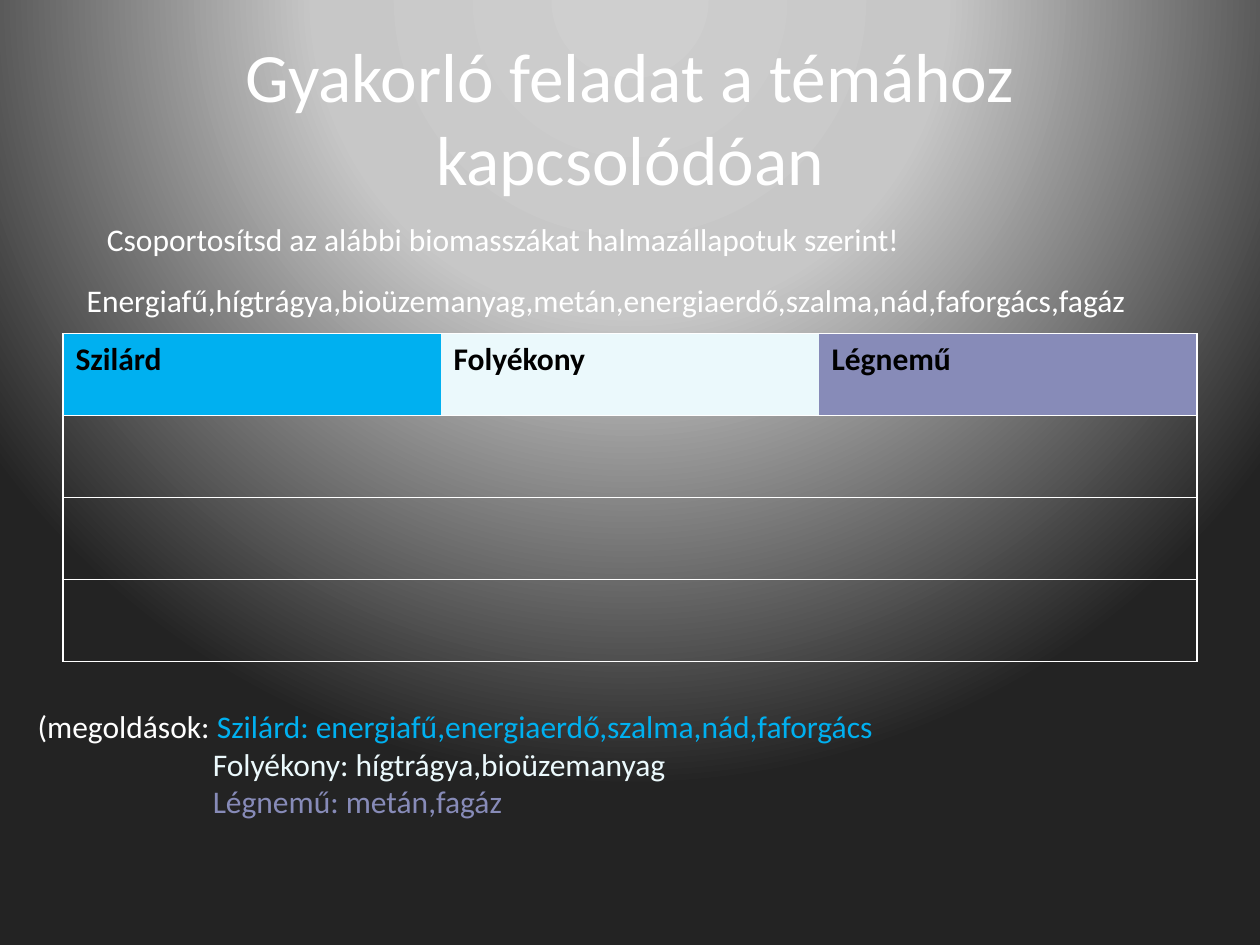
from dataclasses import dataclass

from lxml.etree import SubElement
from pptx import Presentation
from pptx.dml.color import RGBColor
from pptx.enum.text import MSO_ANCHOR as Anchor, PP_ALIGN as Align
from pptx.oxml import parse_xml
from pptx.oxml.ns import nsdecls, qn
from pptx.util import Inches, Pt

COLORS = {
    "white": "FFFFFF", "black": "000000", "solid": "00B0F0",
    "liquid": "EBF9FC", "gas": "878BB8",
    "glow": "CFCFCF", "silver": "C7C7C7", "dark": "232323",
}
GLOW_STOPS = [(0, "glow"), (40, "silver"), (100, "dark")]
NO_STYLE = "{2D5ABB26-0587-4C30-8999-92F81FD0307C}"


@dataclass
class Span:
    text: str
    color: str = "white"
    size: float = 18
    bold: bool = False


@dataclass
class Line:
    spans: list[Span]
    indent: float = 0
    align: Align = Align.LEFT


@dataclass
class TextBlock:
    left: float
    top: float
    width: float
    height: float
    lines: list[Line]
    anchor: Anchor = Anchor.TOP


TEXTS = [
    TextBlock(0.5, 0.3, 9, 1.25, [
        Line([Span("Gyakorló feladat a témához kapcsolódóan", size=39.6)],
             align=Align.CENTER)], Anchor.MIDDLE),
    TextBlock(0.75, 1.7, 8.9, 0.4, [
        Line([Span("Csoportosítsd az alábbi biomasszákat halmazállapotuk szerint!")])]),
    TextBlock(0.59, 2.18, 8.9, 0.4, [
        Line([Span("Energiafű,hígtrágya,bioüzemanyag,metán,energiaerdő,"
                   "szalma,nád,faforgács,fagáz")])]),
    TextBlock(0.2, 5.56, 9.21, 1.01, [
        Line([Span("(megoldások: "),
              Span("Szilárd: energiafű,energiaerdő,szalma,nád,faforgács", "solid")]),
        Line([Span("Folyékony: hígtrágya,bioüzemanyag", "liquid")], indent=1.39),
        Line([Span("Légnemű: metán,fagáz", "gas")], indent=1.39)]),
]
HEADERS = [("Szilárd", "solid"), ("Folyékony", "liquid"), ("Légnemű", "gas")]
ROWS = 4


def rgb(name: str) -> RGBColor:
    return RGBColor.from_string(COLORS[name])


def add_span(para, span: Span) -> None:
    run = para.add_run()
    run.text = span.text
    formats = {"name": "Calibri", "size": Pt(span.size), "bold": span.bold}
    for key, value in formats.items():
        setattr(run.font, key, value)
    run.font.color.rgb = rgb(span.color)


def add_text(page, block: TextBlock) -> None:
    box = page.shapes.add_textbox(Inches(block.left), Inches(block.top),
                                  Inches(block.width), Inches(block.height))
    frame = box.text_frame
    frame.word_wrap = True
    frame.vertical_anchor = block.anchor
    for index, line in enumerate(block.lines):
        para = frame.add_paragraph() if index else frame.paragraphs[0]
        para.alignment = line.align
        if line.indent:
            para._p.get_or_add_pPr().set("marL", str(Inches(line.indent)))
        for span in line.spans:
            add_span(para, span)


def set_borders(cell, column: int) -> None:
    """Rule every row, but leave out the lines between columns."""
    visible = {"lnL": column == 0, "lnR": column == len(HEADERS) - 1,
               "lnT": True, "lnB": True}
    properties = cell._tc.get_or_add_tcPr()
    for side, shown in visible.items():
        border = SubElement(properties, qn(f"a:{side}"), w=str(Pt(0.75)))
        if shown:
            fill = SubElement(border, qn("a:solidFill"))
            SubElement(fill, qn("a:srgbClr"), val=COLORS["white"])
        else:
            SubElement(border, qn("a:noFill"))


def add_sorting_table(page) -> None:
    frame = page.shapes.add_table(ROWS, len(HEADERS), Inches(0.5), Inches(2.65),
                                  Inches(9), Inches(0.65 * ROWS))
    table = frame.table
    table.first_row = table.horz_banding = False
    table._tbl.tblPr.find(qn("a:tableStyleId")).text = NO_STYLE
    for row in range(ROWS):
        for column, (label, color) in enumerate(HEADERS):
            cell = table.cell(row, column)
            set_borders(cell, column)
            if row == 0:
                cell.fill.solid()
                cell.fill.fore_color.rgb = rgb(color)
                add_span(cell.text_frame.paragraphs[0], Span(label, "black", bold=True))
            else:
                cell.fill.background()


def set_background(page) -> None:
    stops = "".join(
        f'<a:gs pos="{place * 1000}"><a:srgbClr val="{COLORS[name]}"/></a:gs>'
        for place, name in GLOW_STOPS)
    page.element.cSld.insert(0, parse_xml(
        f'<p:bg {nsdecls("p", "a")}><p:bgPr><a:gradFill rotWithShape="1">'
        f'<a:gsLst>{stops}</a:gsLst><a:path path="circle">'
        '<a:fillToRect l="50000" t="-80000" r="50000" b="180000"/></a:path>'
        '</a:gradFill><a:effectLst/></p:bgPr></p:bg>'))


def main() -> None:
    deck = Presentation()
    deck.slide_width, deck.slide_height = Inches(10), Inches(7.5)
    page = deck.slides.add_slide(deck.slide_layouts[6])
    set_background(page)
    # Title, then the table, then the task and its solutions
    title, *others = TEXTS
    add_text(page, title)
    add_sorting_table(page)
    for block in others:
        add_text(page, block)
    deck.save("out.pptx")


if __name__ == "__main__":
    main()
